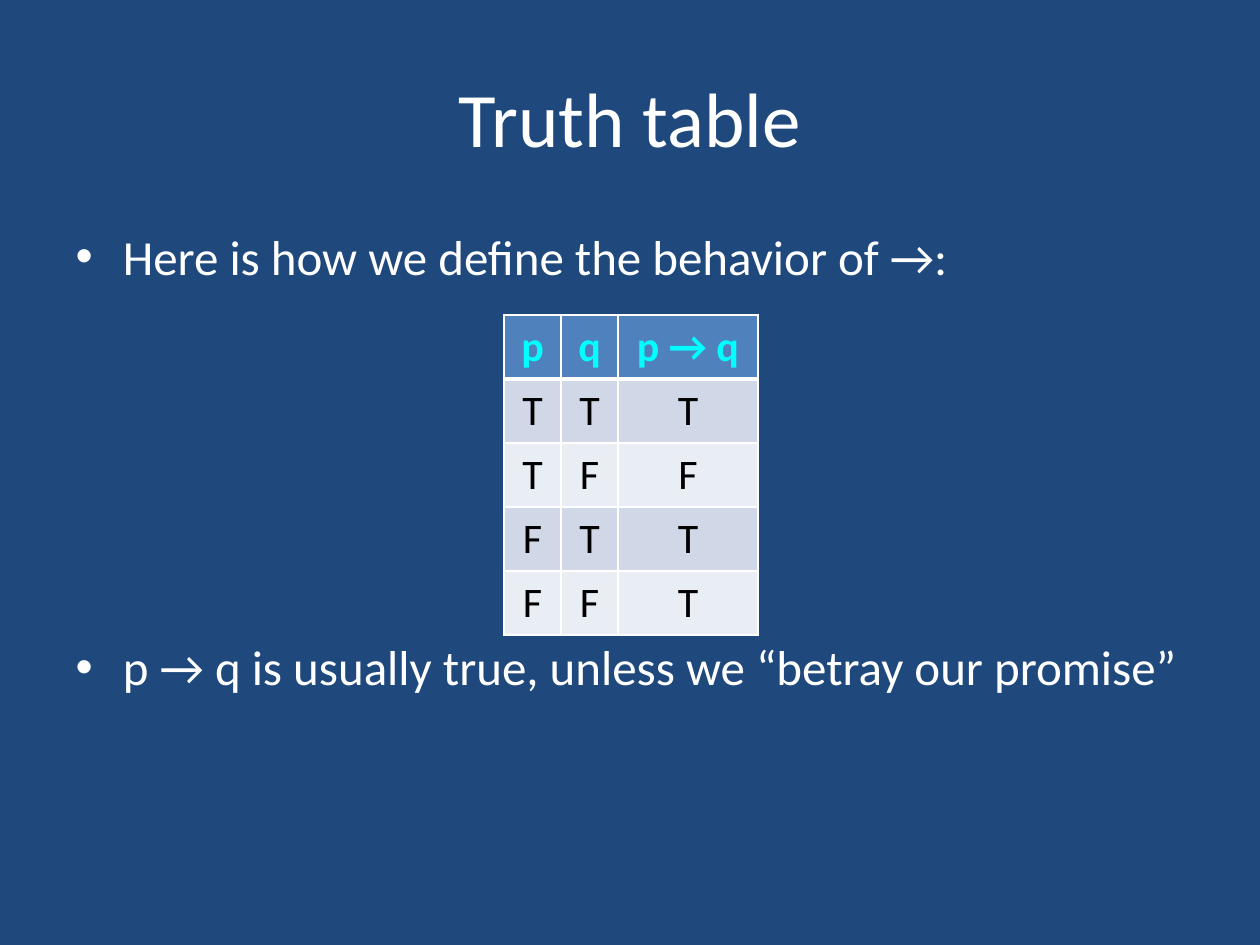
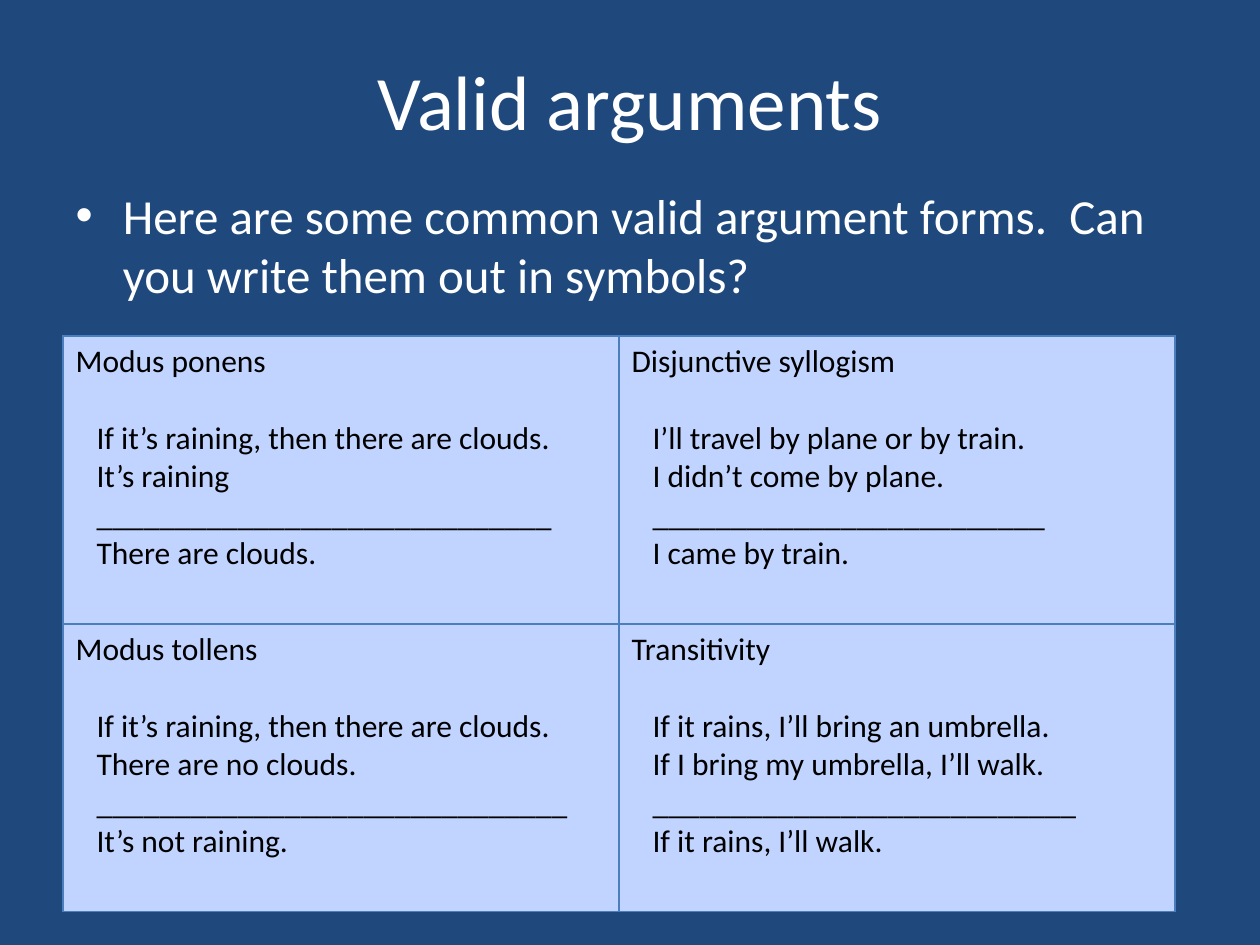
"""Builds two slides on truth tables and valid argument forms."""
from lxml import etree
from pptx import Presentation
from pptx.dml.color import RGBColor
from pptx.enum.text import MSO_AUTO_SIZE, MSO_ANCHOR, PP_ALIGN
from pptx.oxml.ns import qn
from pptx.util import Pt

CENTER = PP_ALIGN.CENTER
LEFT = PP_ALIGN.LEFT
MIDDLE = MSO_ANCHOR.MIDDLE
NO_AUTOFIT = MSO_AUTO_SIZE.NONE

EMU_PER_PX = 914400 / 126
EMU_PER_PT = 12700
SLIDE_WIDTH, SLIDE_HEIGHT = 1260, 945
MARGIN, CONTENT_WIDTH = 63, 1134
TITLE_HEIGHT, BODY_HEIGHT = 158, 624
PREMISE_INDENT = 21
FONT = "Calibri"
TITLE_AND_CONTENT = 1

COLORS = {
    "background": "1F497D",
    "white": "FFFFFF",
    "black": "000000",
    "header_text": "00FFFF",
    "header_fill": "4F81BD",
    "dark_band": "D0D8E8",
    "light_band": "E9EDF4",
    "argument_fill": "C0D4FF",
    "argument_border": "4B7EBC",
}

TRUTH_ROWS = ["p", "q", "p → q"], ["T", "T", "T"], ["T", "F", "F"], ["F", "T", "T"], ["F", "F", "T"]
TRUTH_COLUMNS, TRUTH_ROW_HEIGHT = [57, 57, 140], 64

ARGUMENTS = [
    [
        ("Modus ponens", "If it’s raining, then there are clouds.", "It’s raining",
         "_" * 29, "There are clouds."),
        ("Disjunctive syllogism", "I’ll travel by plane or by train.", "I didn’t come by plane.",
         "_" * 25, "I came by train."),
    ],
    [
        ("Modus tollens", "If it’s raining, then there are clouds.", "There are no clouds.",
         "_" * 30, "It’s not raining."),
        ("Transitivity", "If it rains, I’ll bring an umbrella.", "If I bring my umbrella, I’ll walk.",
         "_" * 27, "If it rains, I’ll walk."),
    ],
]
ARGUMENT_COLUMNS, ARGUMENT_ROW_HEIGHT = [556, 556], 288


def px(length):
    return round(length * EMU_PER_PX)


def color(name):
    return RGBColor.from_string(COLORS[name])


def write_text(paragraph, text, *, size, color_name, bold=False, align=LEFT, space_before=None, indent=0):
    run = paragraph.add_run()
    run.text = text
    run.font.name = FONT
    run.font.size = Pt(size)
    run.font.bold = bold
    run.font.color.rgb = color(color_name)
    paragraph.alignment = align
    if space_before is not None:
        paragraph.space_before = Pt(space_before)
    if indent:
        paragraph._p.get_or_add_pPr().set("marL", str(px(indent)))


def next_paragraph(text_frame, index):
    return text_frame.add_paragraph() if index else text_frame.paragraphs[0]


def place(shape, left, top, width, height):
    shape.left, shape.top, shape.width, shape.height = map(px, (left, top, width, height))
    shape.text_frame.auto_size = NO_AUTOFIT
    shape.text_frame.word_wrap = True


def add_slide(presentation, title, title_top, bullets, body_top):
    """Adds a titled slide; bullets are (text, space before in points) pairs."""
    slide = presentation.slides.add_slide(presentation.slide_layouts[TITLE_AND_CONTENT])
    heading, body = slide.shapes.title, slide.placeholders[1]
    place(heading, MARGIN, title_top, CONTENT_WIDTH, TITLE_HEIGHT)
    heading.text_frame.vertical_anchor = MIDDLE
    write_text(heading.text_frame.paragraphs[0], title, size=44, color_name="white", align=CENTER)
    place(body, MARGIN, body_top, CONTENT_WIDTH, BODY_HEIGHT)
    for index, (text, space_before) in enumerate(bullets):
        write_text(next_paragraph(body.text_frame, index), text, size=28,
                   color_name="white", space_before=space_before)
    return slide


def add_table(slide, left, top, column_widths, row_count, row_height):
    frame = slide.shapes.add_table(row_count, len(column_widths), px(left), px(top),
                                   px(sum(column_widths)), px(row_height * row_count))
    table = frame.table
    table.first_row = table.horz_banding = False
    for column, width in zip(table.columns, column_widths):
        column.width = px(width)
    for row in table.rows:
        row.height = px(row_height)
    return table


def style_cell(cell, fill_name, border_name, width, **edge_widths):
    """Sets the fill and the four borders, with widths in points."""
    properties = cell._tc.get_or_add_tcPr()
    for edge in ("L", "R", "T", "B"):
        line = etree.SubElement(properties, qn(f"a:ln{edge}"),
                                w=str(round(edge_widths.get(edge, width) * EMU_PER_PT)))
        fill = etree.SubElement(line, qn("a:solidFill"))
        etree.SubElement(fill, qn("a:srgbClr"), val=COLORS[border_name])
    cell.fill.solid()
    cell.fill.fore_color.rgb = color(fill_name)


def add_truth_table(slide):
    table = add_table(slide, 504, 315, TRUTH_COLUMNS, len(TRUTH_ROWS), TRUTH_ROW_HEIGHT)
    for row, values in enumerate(TRUTH_ROWS):
        is_header = row == 0
        band = "dark_band" if row % 2 else "light_band"
        edges = {0: {"B": 3}, 1: {"T": 3}}.get(row, {})
        for column, value in enumerate(values):
            cell = table.cell(row, column)
            style_cell(cell, "header_fill" if is_header else band, "white", 1, **edges)
            write_text(cell.text_frame.paragraphs[0], value, size=24, bold=is_header, align=CENTER,
                       color_name="header_text" if is_header else "black")


def add_argument_table(slide):
    table = add_table(slide, MARGIN, 336, ARGUMENT_COLUMNS, len(ARGUMENTS), ARGUMENT_ROW_HEIGHT)
    for row, arguments in enumerate(ARGUMENTS):
        for column, lines in enumerate(arguments):
            cell = table.cell(row, column)
            style_cell(cell, "argument_fill", "argument_border", 0.75)
            for index, line in enumerate(lines):
                write_text(next_paragraph(cell.text_frame, index), line, size=18, color_name="black",
                           space_before=22 if index == 1 else 0,
                           indent=PREMISE_INDENT if index else 0)


def main():
    presentation = Presentation()
    presentation.slide_width, presentation.slide_height = px(SLIDE_WIDTH), px(SLIDE_HEIGHT)
    background = presentation.slide_master.background.fill
    background.solid()
    background.fore_color.rgb = color("background")

    truth_slide = add_slide(presentation, "Truth table", 38, [
        ("Here is how we define the behavior of →:", None),
        ("p → q is usually true, unless we “betray our promise”", 201),
    ], 220)
    add_truth_table(truth_slide)

    argument_slide = add_slide(presentation, "Valid arguments", 21, [
        ("Here are some common valid argument forms.  Can you write them out in symbols?", None),
    ], 179)
    add_argument_table(argument_slide)
    presentation.save("out.pptx")


if __name__ == "__main__":
    main()
